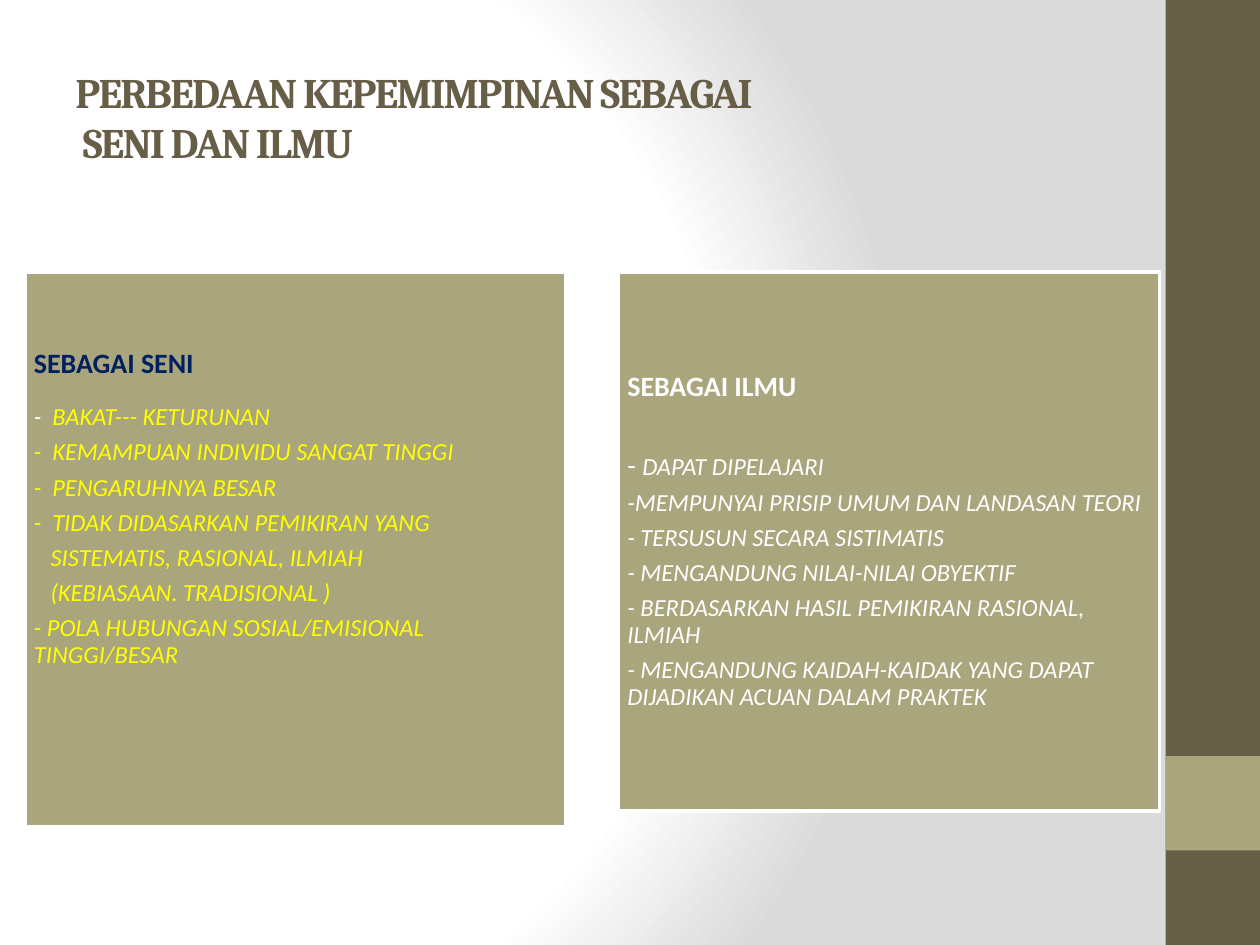
import pptx
import pptx.dml.color
import pptx.enum.shapes
import pptx.enum.text
import pptx.oxml
import pptx.util
from pptx.oxml.ns import nsdecls

Pt = pptx.util.Pt
ANCHOR = pptx.enum.text.MSO_ANCHOR

BROWN, OLIVE, WHITE = "675E47", "A9A57C", "FFFFFF"
NAVY, YELLOW = "002060", "FFFF00"


def rgb(value):
    return pptx.dml.color.RGBColor.from_string(value)


def run(text, **fmt):
    """Pair a piece of text with its format: size, color, font, bold, italic, track."""
    return text, fmt


class Deck:
    font, size, color = "Calibri", 14, WHITE

    def __init__(self, width, height):
        self.prs = pptx.Presentation()
        self.prs.slide_width, self.prs.slide_height = Pt(width), Pt(height)
        self.s = self.prs.slides.add_slide(self.prs.slide_layouts[6])

    def background(self, stops, center):
        """Circular gradient; stops are (percent, colour), center is l, t, r, b in percent."""
        gs = "".join(f'<a:gs pos="{pos * 1000}"><a:srgbClr val="{color}"/></a:gs>'
                     for pos, color in stops)
        rect = " ".join(f'{side}="{v * 1000}"' for side, v in zip("ltrb", center))
        bg = pptx.oxml.parse_xml(
            f'<p:bg {nsdecls("p", "a")}><p:bgPr><a:gradFill rotWithShape="1"><a:gsLst>{gs}'
            f'</a:gsLst><a:path path="circle"><a:fillToRect {rect}/></a:path></a:gradFill>'
            '<a:effectLst/></p:bgPr></p:bg>')
        self.s.element.cSld.insert(0, bg)

    def rect(self, x, y, w, h, fill, line=None):
        sp = self.s.shapes.add_shape(pptx.enum.shapes.MSO_SHAPE.RECTANGLE,
                                     Pt(x), Pt(y), Pt(w), Pt(h))
        sp.shadow.inherit = False
        sp.fill.solid()
        sp.fill.fore_color.rgb = rgb(fill)
        if line:
            sp.line.color.rgb = rgb(line)
            sp.line.width = Pt(2)
        else:
            sp.line.fill.background()
        return sp

    def textbox(self, x, y, w, h, anchor):
        sp = self.s.shapes.add_textbox(Pt(x), Pt(y), Pt(w), Pt(h))
        sp.text_frame.word_wrap = True
        sp.text_frame.vertical_anchor = anchor
        return sp

    def paragraph(self, tf, runs, first=False, after=0, spacing=1.0, left=0, hang=0):
        p = tf.paragraphs[0] if first else tf.add_paragraph()
        p.alignment = pptx.enum.text.PP_ALIGN.LEFT
        p.line_spacing, p.space_after = spacing, Pt(after)
        pPr = p._p.get_or_add_pPr()
        pPr.set("marL", str(Pt(left)))
        pPr.set("indent", str(-Pt(hang)))
        for text, fmt in runs:
            for i, part in enumerate(text.split("\v")):
                if i:
                    p.add_line_break()
                self.add_run(p, part, **fmt)

    def add_run(self, p, text, size=None, color=None, font=None, bold=False,
                italic=False, track=0):
        r = p.add_run()
        r.text = text
        r.font.name, r.font.size = font or self.font, Pt(size or self.size)
        r.font.bold, r.font.italic = bold, italic
        r.font.color.rgb = rgb(color or self.color)
        if track:
            r.font._element.set("spc", str(track * 100))

    def panel(self, x, height, top, heading, gap, items):
        """Olive box: a heading, then items of (runs, left indent, hanging indent)."""
        tf = self.rect(x, 155.5, 309, height, OLIVE, WHITE).text_frame
        tf.word_wrap = True
        tf.vertical_anchor = ANCHOR.TOP
        tf.margin_left = tf.margin_right = tf.margin_bottom = Pt(5)
        tf.margin_top = Pt(top)
        self.paragraph(tf, [heading], first=True, after=gap, spacing=0.9)
        for runs, left, hang in items:
            self.paragraph(tf, runs, after=5, spacing=0.9, left=left, hang=hang)


def main():
    deck = Deck(720, 540)
    deck.background([(0, WHITE), (75, WHITE), (100, "DADADA")], (20, 50, 100, 50))
    deck.rect(666, 0, 54, 540, BROWN)
    deck.rect(666, 432, 54, 54, OLIVE)

    title = deck.textbox(36, 21.6, 600, 90, ANCHOR.MIDDLE)
    deck.paragraph(title.text_frame, [
        run("PERBEDAAN KEPEMIMPINAN SEBAGAI\v SENI DAN ILMU", size=24, color=BROWN,
            font="Cambria", bold=True, track=-1)], first=True)

    def art(text, left=0, hang=0):
        return [run(text, color=YELLOW, italic=True)], left, hang

    def science(text):
        return [run(text, italic=True)], 0, 0

    deck.panel(14.4, 317, 44.3, run("SEBAGAI SENI", size=16, color=NAVY, bold=True), 14, [
        ([run("-\t", italic=True), run("BAKAT--- KETURUNAN", color=YELLOW, italic=True)],
         10.5, 10.5),
        art("-\tKEMAMPUAN INDIVIDU SANGAT TINGGI", 10.5, 10.5),
        art("-\tPENGARUHNYA BESAR", 10.5, 10.5),
        art("-\tTIDAK DIDASARKAN PEMIKIRAN YANG", 10.5, 10.5),
        art("SISTEMATIS, RASIONAL, ILMIAH", 9.5),
        art("(KEBIASAAN. TRADISIONAL )", 9.5),
        art("- POLA HUBUNGAN SOSIAL/EMISIONAL TINGGI/BESAR"),
    ])
    deck.panel(353.5, 308, 57, run("SEBAGAI ILMU", size=16, bold=True), 28, [
        ([run("- ", size=16), run("DAPAT DIPELAJARI", italic=True)], 0, 0),
        science("-MEMPUNYAI PRISIP UMUM DAN LANDASAN TEORI"),
        science("- TERSUSUN SECARA SISTIMATIS"),
        science("- MENGANDUNG NILAI-NILAI OBYEKTIF"),
        science("- BERDASARKAN HASIL PEMIKIRAN RASIONAL,\vILMIAH"),
        science("- MENGANDUNG KAIDAH-KAIDAK YANG DAPAT DIJADIKAN ACUAN DALAM PRAKTEK"),
    ])
    deck.prs.save("out.pptx")


if __name__ == "__main__":
    main()
